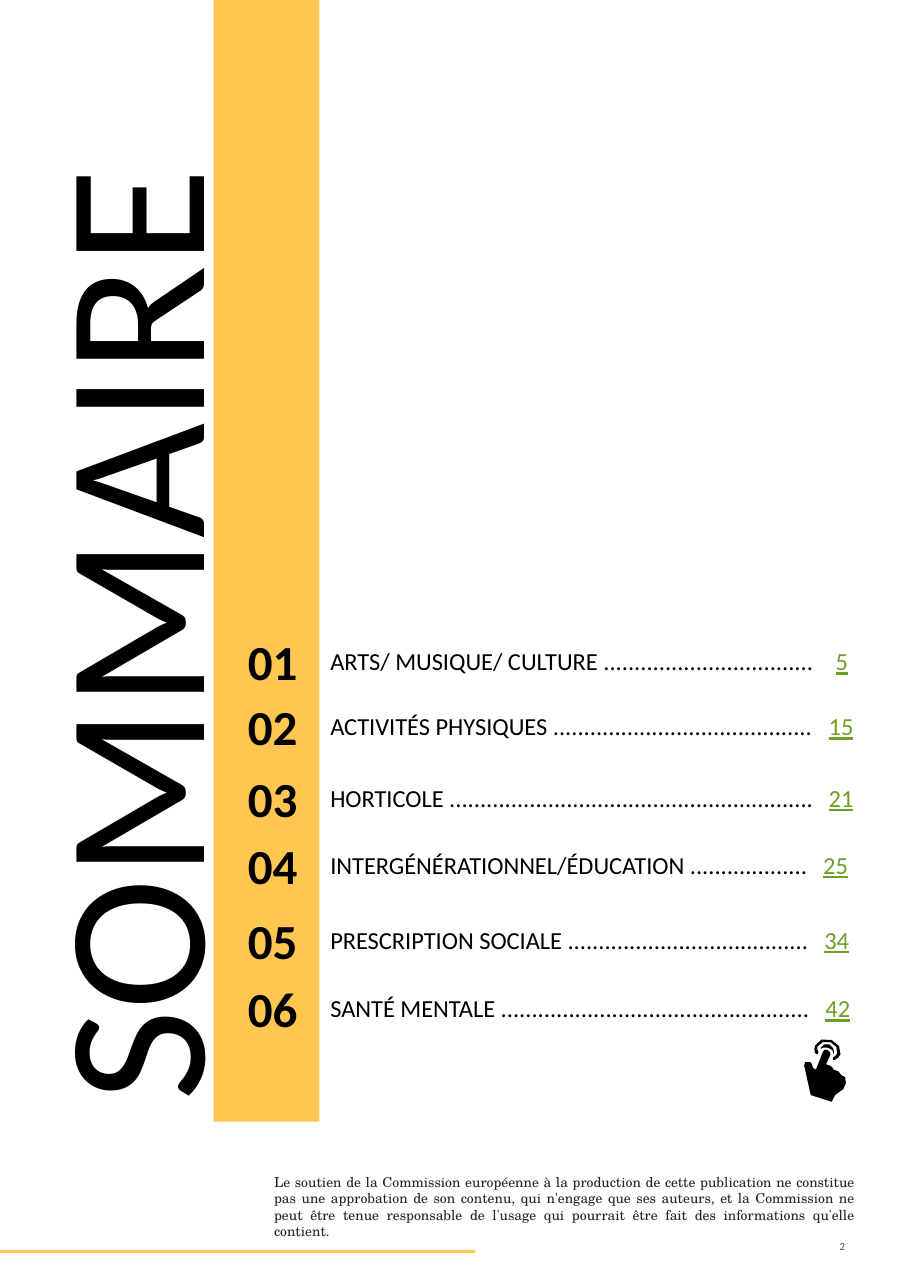
from pptx import Presentation
from pptx.dml.color import RGBColor
from pptx.enum import shapes, text
from pptx.oxml import parse_xml
from pptx.oxml.ns import nsdecls
from pptx.util import Inches, Pt

YELLOW = RGBColor(0xFF, 0xC6, 0x52)
BLACK = RGBColor(0, 0, 0)
GREEN = RGBColor(0x6B, 0x9F, 0x25)
DARK = RGBColor(0x24, 0x24, 0x24)
GREY = RGBColor(0x4B, 0x4B, 0x4B)
SANS, SERIF = "Calibri", "TeX Gyre Schola"

# Content: row top, chapter with its dots, page, right end of the page number
CHAPTERS = [
    (5.81, "ARTS/ MUSIQUE/ CULTURE ..................................", "5", 4.70),
    (6.40, "ACTIVITÉS PHYSIQUES ..........................................", "15", 4.75),
    (7.05, "HORTICOLE ...........................................................", "21", 4.75),
    (7.66, "INTERGÉNÉRATIONNEL/ÉDUCATION ...................", "25", 4.70),
    (8.34, "PRESCRIPTION SOCIALE .......................................", "34", 4.71),
    (8.96, "SANTÉ MENTALE ..................................................", "42", 4.72),
]
DISCLAIMER = (
    "Le soutien de la Commission européenne à la production de cette publication "
    "ne constitue pas une approbation de son contenu, qui n'engage que ses auteurs, "
    "et la Commission ne peut être tenue responsable de l'usage qui pourrait être "
    "fait des informations qu'elle contient."
)

# Tapping hand: start point, then lines (2 numbers) or cubic curves (6), in inches
OUTER_RIPPLE = [
    (7.42, 9.57), (7.43, 9.55), (7.42, 9.54, 7.42, 9.52, 7.42, 9.5),
    (7.44, 9.46, 7.49, 9.44, 7.54, 9.46), (7.59, 9.48, 7.61, 9.52, 7.6, 9.56),
    (7.59, 9.58, 7.58, 9.59, 7.56, 9.6), (7.56, 9.62), (7.58, 9.62),
    (7.6, 9.61, 7.62, 9.59, 7.63, 9.57), (7.64, 9.52, 7.61, 9.46, 7.55, 9.44),
    (7.48, 9.41, 7.42, 9.44, 7.4, 9.49), (7.39, 9.51, 7.39, 9.54, 7.4, 9.56),
]
INNER_RIPPLE = [
    (7.52, 9.51), (7.55, 9.52, 7.57, 9.54, 7.57, 9.57), (7.57, 9.55),
    (7.58, 9.53, 7.56, 9.5, 7.53, 9.48), (7.5, 9.47, 7.46, 9.48, 7.45, 9.51),
    (7.45, 9.52), (7.46, 9.51, 7.49, 9.5, 7.52, 9.51),
]
HAND = [
    (7.68, 9.83), (7.69, 9.78, 7.66, 9.76, 7.64, 9.76), (7.63, 9.75),
    (7.62, 9.73, 7.61, 9.72, 7.6, 9.72), (7.57, 9.71),
    (7.56, 9.69, 7.55, 9.68, 7.53, 9.67), (7.5, 9.66), (7.54, 9.57),
    (7.54, 9.55, 7.53, 9.54, 7.51, 9.53), (7.49, 9.52, 7.47, 9.53, 7.47, 9.55),
    (7.41, 9.7), (7.41, 9.71, 7.4, 9.71, 7.39, 9.7), (7.38, 9.69), (7.37, 9.66),
    (7.37, 9.65, 7.36, 9.64, 7.35, 9.64), (7.32, 9.63, 7.29, 9.64, 7.3, 9.67),
    (7.36, 9.94), (7.55, 10), (7.58, 9.94), (7.65, 9.9, 7.68, 9.87, 7.68, 9.83),
]


def add_frame(slide, box, anchor):
    label = slide.shapes.add_textbox(*map(Inches, box))
    label.text_frame.word_wrap = True
    label.text_frame.vertical_anchor = anchor
    return label


def add_text(slide, box, words, size, font=SANS, color=BLACK, bold=None,
             align=text.PP_ALIGN.LEFT, anchor=text.MSO_ANCHOR.MIDDLE):
    label = add_frame(slide, box, anchor)
    line = label.text_frame.paragraphs[0]
    line.alignment = align
    line.add_run().text = words
    line.font.size, line.font.name, line.font.bold = Pt(size), font, bold
    line.font.color.rgb = color
    return label


def add_chapter(slide, number, top, title, page, page_end):
    add_text(slide, (2.12, top, 0.71, 0.38), f"{number:02d}", 32, bold=True,
             align=text.PP_ALIGN.CENTER)
    label = add_frame(slide, (2.9, top, 4.96, 0.38), text.MSO_ANCHOR.MIDDLE)
    line = label.text_frame.paragraphs[0]
    # The page number ends on a right tab
    line._p.get_or_add_pPr().append(parse_xml(
        f'<a:tabLst {nsdecls("a")}><a:tab pos="{Inches(page_end)}" algn="r"/></a:tabLst>'))
    line.font.size, line.font.name = Pt(16), SANS
    for words, color, underline in ((title + "\t", BLACK, None), (page, GREEN, True)):
        run = line.add_run()
        run.text = words
        run.font.color.rgb = color
        run.font.underline = underline


def trace(outline):
    """Turn lines and cubic curves into points, with one point inside each curve."""
    points = [outline[0]]
    for segment in outline[1:]:
        if len(segment) == 6:
            corners = points[-1], segment[:2], segment[2:4], segment[4:]
            points.append(tuple((a + 3 * b + 3 * c + d) / 8 for a, b, c, d in zip(*corners)))
        points.append(segment[-2:])
    return points


def fill_plain(shape, color):
    shape.shadow.inherit = False
    shape.fill.solid()
    shape.fill.fore_color.rgb = color
    shape.line.fill.background()


def main():
    deck = Presentation()
    deck.slide_width, deck.slide_height = Inches(8.27), Inches(11.69)
    slide = deck.slides.add_slide(deck.slide_layouts[6])

    # Yellow band and footer rule
    band = slide.shapes.add_shape(shapes.MSO_SHAPE.RECTANGLE,
                                  *map(Inches, (1.94, 0, 0.96, 10.18)))
    fill_plain(band, YELLOW)
    rule = slide.shapes.add_connector(shapes.MSO_CONNECTOR.STRAIGHT,
                                      *map(Inches, (0, 11.36, 4.31, 11.36)))
    rule.line.color.rgb = YELLOW
    rule.line.width = Pt(1.5)
    rule._element.spPr.append(parse_xml(f'<a:effectLst {nsdecls("a")}/>'))

    # Upright title
    title = add_text(slide, (-3.04, 3.58, 9.56, 3.48), "SOMMAIRE", 130,
                     anchor=text.MSO_ANCHOR.TOP)
    title.rotation = 270

    # Chapters
    for number, chapter in enumerate(CHAPTERS, 1):
        add_chapter(slide, number, *chapter)

    # Tapping hand
    for outline in (OUTER_RIPPLE, INNER_RIPPLE, HAND):
        points = [(round(x * 1000), round(y * 1000)) for x, y in trace(outline)]
        builder = slide.shapes.build_freeform(*points[0], scale=Inches(1) / 1000)
        builder.add_line_segments(points[1:], close=True)
        fill_plain(builder.convert_to_shape(), BLACK)

    # Footer
    add_text(slide, (6.69, 11.18, 1.08, 0.26), "2", 7, color=GREY,
             align=text.PP_ALIGN.RIGHT)
    disclaimer = add_text(slide, (2.39, 10.6, 5.46, 0.56), DISCLAIMER, 9, SERIF, DARK,
                          align=text.PP_ALIGN.JUSTIFY, anchor=text.MSO_ANCHOR.TOP)
    disclaimer.text_frame.auto_size = text.MSO_AUTO_SIZE.SHAPE_TO_FIT_TEXT

    deck.save("out.pptx")


if __name__ == "__main__":
    main()
